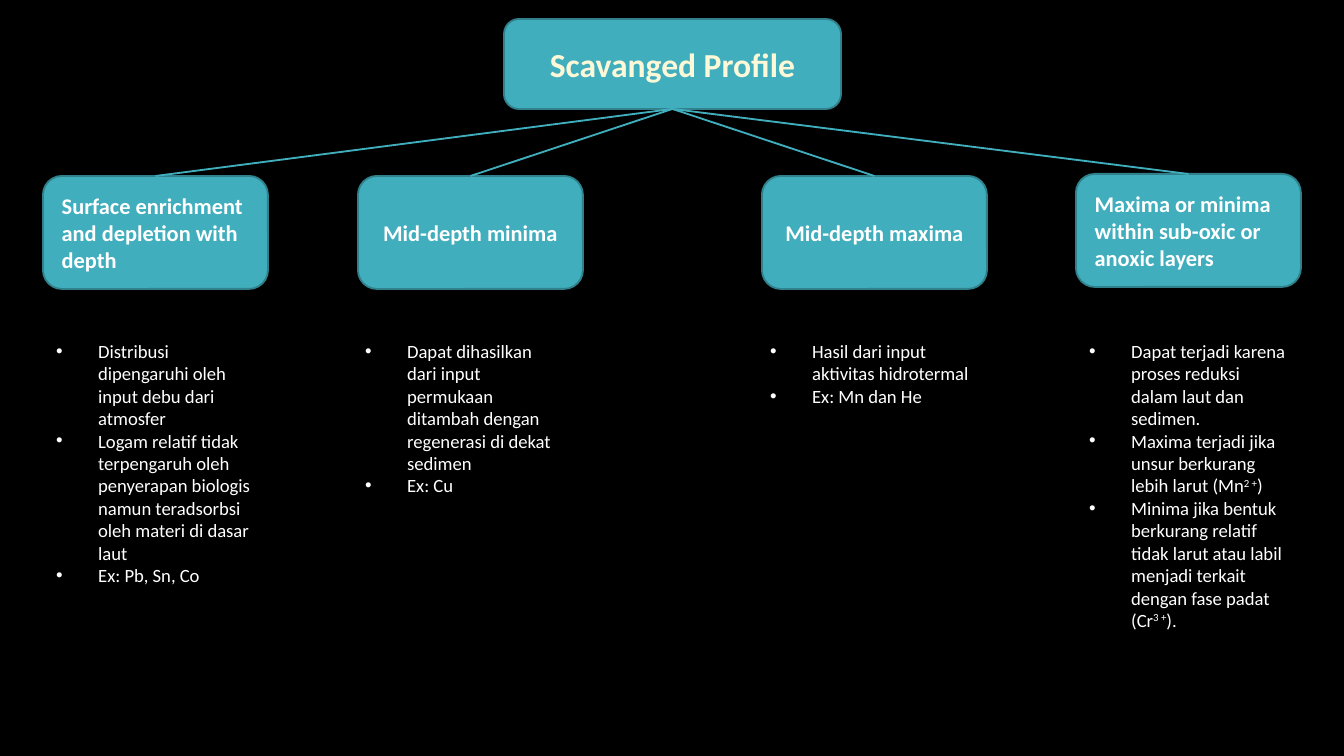
from lxml.etree import SubElement
from pptx import Presentation
from pptx.dml.color import RGBColor
from pptx.enum.shapes import MSO_CONNECTOR as Link, MSO_SHAPE as Kind
from pptx.enum.text import MSO_ANCHOR as Anchor, MSO_AUTO_SIZE as Fit, PP_ALIGN as Align
from pptx.oxml.ns import qn
from pptx.util import Pt

SCALE = 914400 / 134.4
TEAL, EDGE, CREAM, WHITE = "41AEBD", "30818C", "FDF8D8", "FFFFFF"
WIDTH = 225
CARDS = [
    (43, 176, 43, Align.LEFT, "Surface enrichment and depletion with depth", [
        ["Distribusi dipengaruhi oleh input debu dari atmosfer"],
        ["Logam relatif tidak terpengaruh oleh penyerapan biologis "
         "namun teradsorbsi oleh materi di dasar laut"],
        ["Ex: Pb, Sn, Co"],
    ]),
    (358, 176, 352, Align.CENTER, "Mid-depth minima", [
        ["Dapat dihasilkan dari input permukaan ditambah dengan "
         "regenerasi di dekat sedimen"],
        ["Ex: Cu"],
    ]),
    (762, 176, 757, Align.CENTER, "Mid-depth maxima", [
        ["Hasil dari input aktivitas hidrotermal"],
        ["Ex: Mn dan He"],
    ]),
    (1076, 174, 1076, Align.LEFT, "Maxima or minima within sub-oxic or anoxic layers", [
        ["Dapat terjadi karena proses reduksi dalam laut dan sedimen."],
        ["Maxima terjadi jika unsur berkurang lebih larut (Mn", "2 +", ")"],
        ["Minima jika bentuk berkurang relatif tidak larut atau labil "
         "menjadi terkait dengan fase padat (Cr", "3 +", ")."],
    ]),
]


def px(n):
    return round(n * SCALE)


def color(code):
    return RGBColor.from_string(code)


def style(font, size, code, bold=False):
    font.name = "Calibri"
    font.size = Pt(size)
    font.bold = bold
    font.color.rgb = color(code)


def add_box(slide, area, text, size, code, align):
    box = slide.shapes.add_shape(Kind.ROUNDED_RECTANGLE, *map(px, area))
    box.shadow.inherit = False
    box.fill.solid()
    box.fill.fore_color.rgb = color(TEAL)
    box.line.color.rgb = color(EDGE)
    box.line.width = Pt(1)
    frame = box.text_frame
    frame.word_wrap = True
    frame.vertical_anchor = Anchor.MIDDLE
    para = frame.paragraphs[0]
    para.text = text
    para.alignment = align
    style(para.font, size, code, True)
    return box


def add_link(slide, top, card):
    line = slide.shapes.add_connector(Link.STRAIGHT, 0, 0, 0, 0)
    line.begin_connect(top, 2)
    line.end_connect(card, 0)
    line.line.color.rgb = color(TEAL)
    line.line.width = Pt(1)
    SubElement(line._element.spPr, qn("a:effectLst"))


def add_bullet(para):
    props = para._p.get_or_add_pPr()
    props.set("marL", str(px(42)))
    props.set("indent", str(-px(42)))
    SubElement(props, qn("a:buFont"), typeface="Arial")
    SubElement(props, qn("a:buChar"), char="•")


def add_list(slide, left, items):
    lines = {43: 11, 352: 7, 757: 4}.get(left, 13)
    area = (left, 333, WIDTH, 14 + round(22.5 * lines))
    frame = slide.shapes.add_textbox(*map(px, area)).text_frame
    frame.word_wrap = True
    frame.auto_size = Fit.SHAPE_TO_FIT_TEXT
    for i, parts in enumerate(items):
        para = frame.add_paragraph() if i else frame.paragraphs[0]
        add_bullet(para)
        style(para.font, 10, WHITE)
        for j, part in enumerate(parts):
            run = para.add_run()
            run.text = part
            if j == 1:
                run._r.get_or_add_rPr().set("baseline", "30000")


def main():
    deck = Presentation()
    deck.slide_width, deck.slide_height = px(1344), px(756)
    slide = deck.slides.add_slide(deck.slide_layouts[6])
    fill = slide.background.fill
    fill.solid()
    fill.fore_color.rgb = color("000000")
    top = add_box(slide, (504, 19, 337, 90), "Scavanged Profile", 18, CREAM, Align.CENTER)
    for left, y, edge, align, title, items in CARDS:
        card = add_box(slide, (left, y, WIDTH, 113), title, 12, WHITE, align)
        add_link(slide, top, card)
        add_list(slide, edge, items)
    deck.save("out.pptx")


if __name__ == "__main__":
    main()
